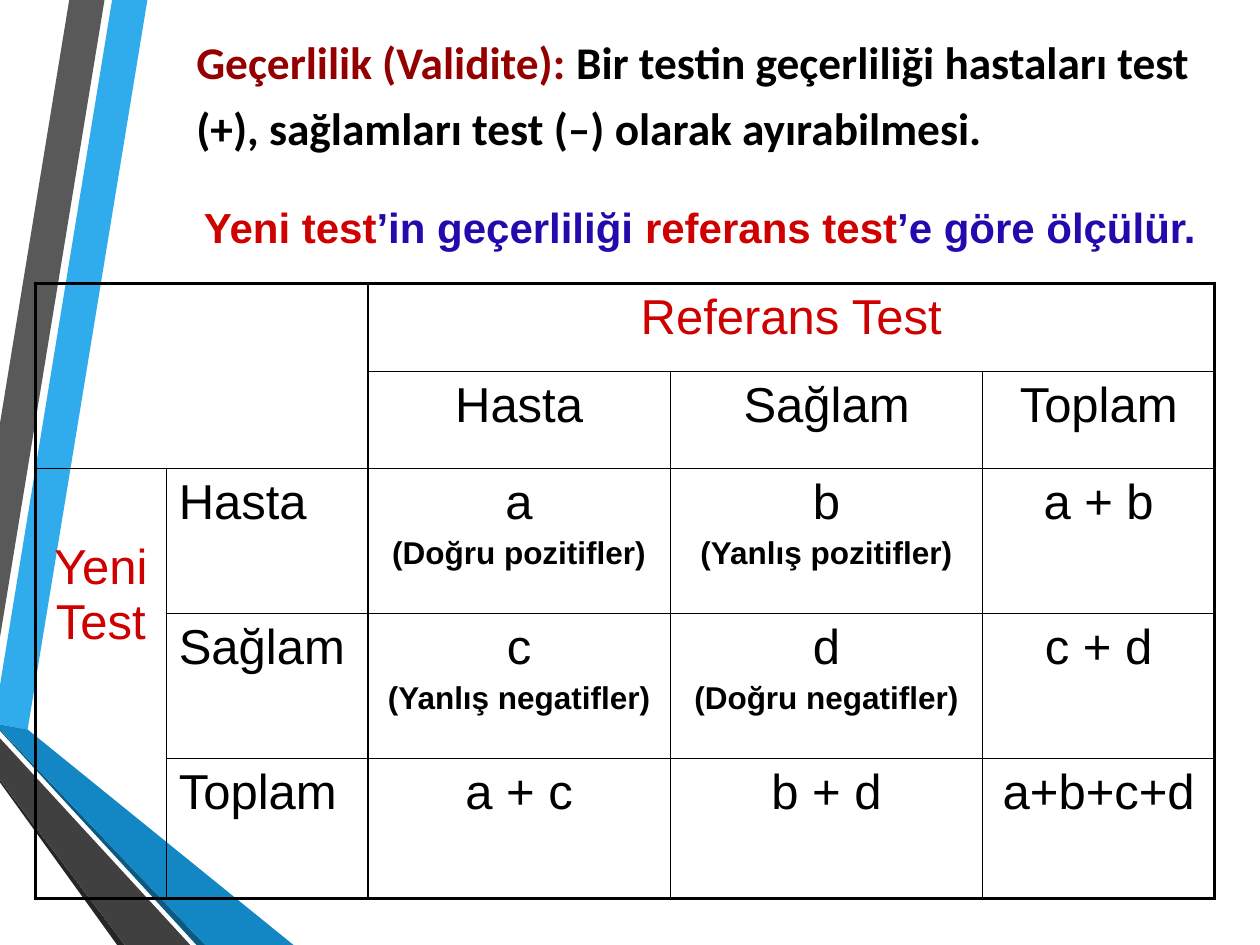
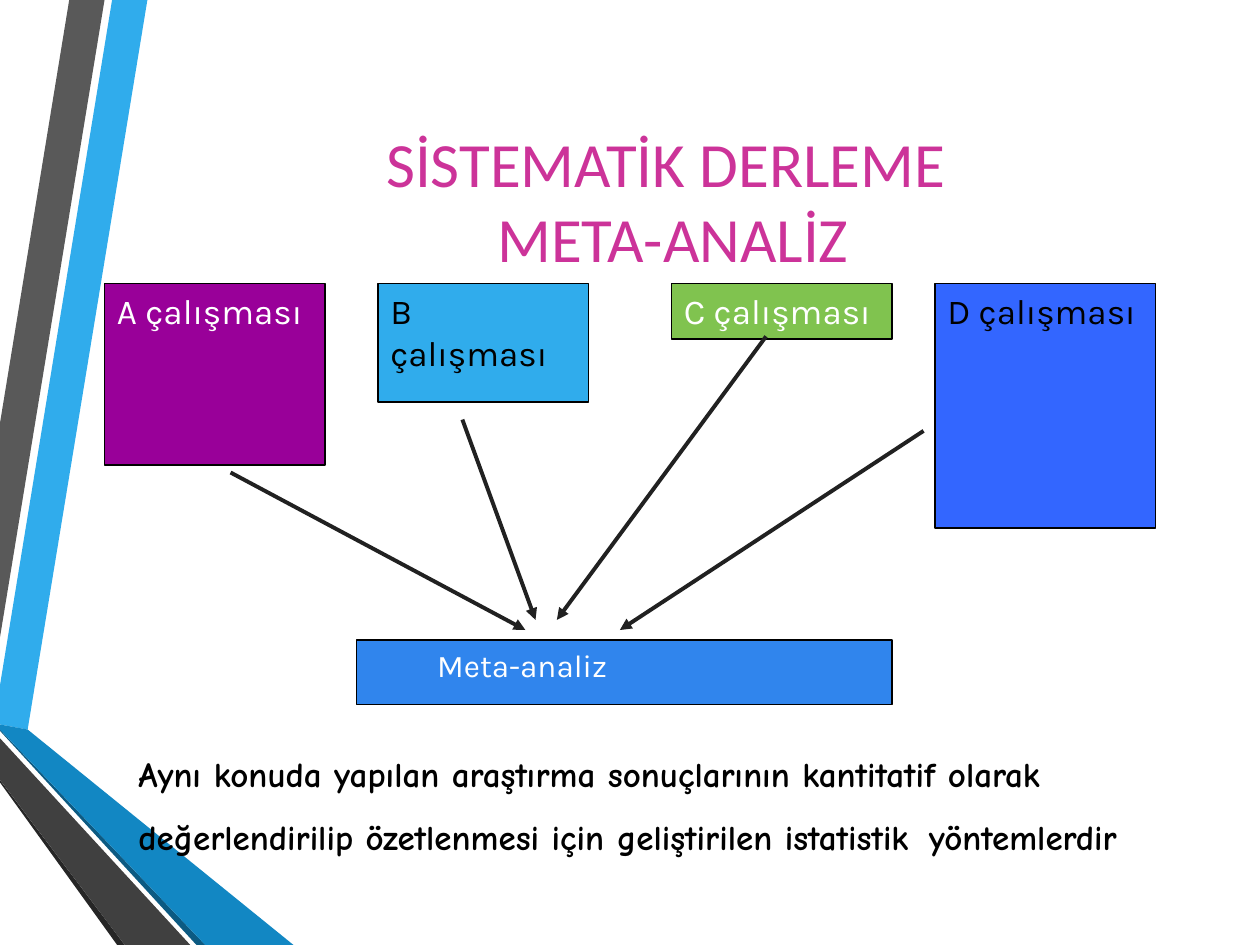
from dataclasses import dataclass
from lxml import etree
from pptx import Presentation
from pptx.dml.color import RGBColor
from pptx.enum.shapes import MSO_CONNECTOR, MSO_SHAPE
from pptx.enum.text import MSO_ANCHOR, PP_ALIGN
from pptx.oxml.ns import qn
from pptx.util import Inches, Pt

LEFT, MID = PP_ALIGN.LEFT, PP_ALIGN.CENTER
TOP, CENTER = MSO_ANCHOR.TOP, MSO_ANCHOR.MIDDLE
RECT, LINE = MSO_SHAPE.RECTANGLE, MSO_CONNECTOR.STRAIGHT


@dataclass(frozen=True)
class Theme:
    black: str = "000000"
    white: str = "FFFFFF"
    red: str = "CE0000"
    maroon: str = "940000"
    indigo: str = "2409AD"
    pink: str = "CC3399"
    sky: str = "30ACEC"
    ocean: str = "1287C3"
    navy: str = "0C5A82"
    gray: str = "595959"
    slate: str = "404040"
    coal: str = "262626"
    purple: str = "990099"
    green: str = "80C34F"
    blue: str = "3366FF"
    azure: str = "3085ED"
    ink: str = "212121"
    head: float = 36
    grid: float = 28
    lead: float = 25.9
    note: float = 24
    body: float = 20
    small: float = 18
    gap: float = 32


T = Theme()


def write(para, parts, size, face, color=T.black, bold=False, align=LEFT):
    para.alignment = align
    font = para.font
    font.size, font.name, font.bold = Pt(size), face, bold
    if isinstance(parts, str):
        font.color.rgb = RGBColor.from_string(color)
        parts = [(parts, None)]
    for text, tint in parts:
        for i, piece in enumerate(text.split("\n")):
            if i:
                para.add_line_break()
            run = para.add_run()
            run.text = piece
            if tint:
                run.font.color.rgb = RGBColor.from_string(tint)


def frame(slide, left, top, width, height, anchor=TOP):
    box = slide.shapes.add_textbox(Inches(left), Inches(top), Inches(width), Inches(height))
    box.text_frame.word_wrap = True
    box.text_frame.vertical_anchor = anchor
    return box.text_frame


deck = Presentation()
deck.slide_width, deck.slide_height = Inches(10), Inches(7.5)
blank = deck.slide_layouts[6]
valid, meta = [deck.slides.add_slide(blank) for _ in range(2)]

bands = [
    (T.sky, [(0, 5.44), (0, 5.75), (0.22, 5.79), (1.17, 0), (0.89, 0)]),
    (T.gray, [(0.83, 0), (0.55, 0), (0, 3.36), (0, 5.06)]),
    (T.coal, [(0, 6.19), (0, 6.21), (0.93, 7.5), (0.99, 7.5)]),
    (T.navy, [(0, 5.79), (0, 5.8), (1.56, 7.5), (1.63, 7.5)]),
    (T.ocean, [(0, 5.79), (1.63, 7.5), (2.33, 7.5), (0.22, 5.79), (0, 5.75)]),
    (T.slate, [(0, 6.19), (0.99, 7.5), (1.51, 7.5), (0, 5.86)]),
]
for slide in (valid, meta):
    for color, points in bands:
        start, *rest = [(Inches(x), Inches(y)) for x, y in points]
        path = slide.shapes.build_freeform(*start)
        path.add_line_segments(rest, close=True)
        band = path.convert_to_shape()
        band.shadow.inherit = False
        band.fill.solid()
        band.fill.fore_color.rgb = RGBColor.from_string(color)
        band.line.fill.background()

lead = frame(valid, 1.46, 0.13, 8.39, 1.15, CENTER).paragraphs[0]
lead.line_spacing = 1.2
write(lead, [
    ("Geçerlilik (Validite): ", T.maroon),
    ("Bir testin geçerliliği hastaları test (+), sağlamları test (–) olarak ayırabilmesi.", T.black),
], T.lead, "Calibri", bold=True)

cols = [1.04, 1.6, 2.4, 2.48, 1.84]
rows = [0.7, 0.77, 1.15, 1.15, 1.11]
cells = [
    ["", "", "Referans Test", "", ""],
    ["", "", "Hasta", "Sağlam", "Toplam"],
    ["Yeni Test", "Hasta", "a\n(Doğru pozitifler)", "b\n(Yanlış pozitifler)", "a + b"],
    ["", "Sağlam", "c\n(Yanlış negatifler)", "d\n(Doğru negatifler)", "c + d"],
    ["", "Toplam", "a + c", "b + d", "a+b+c+d"],
]
table = valid.shapes.add_table(
    len(rows), len(cols), Inches(0.28), Inches(2.25), Inches(sum(cols)), Inches(sum(rows))).table
table.first_row = table.horz_banding = False
for i, width in enumerate(cols):
    table.columns[i].width = Inches(width)
for i, height in enumerate(rows):
    table.rows[i].height = Inches(height)
for first, last in [((0, 0), (1, 1)), ((0, 2), (0, 4)), ((2, 0), (4, 0))]:
    table.cell(*first).merge(table.cell(*last))

for r, row in enumerate(cells):
    for c, text in enumerate(row):
        cell = table.cell(r, c)
        cell.fill.background()
        high = cell.span_height if cell.is_merge_origin else 1
        wide = cell.span_width if cell.is_merge_origin else 1
        edges = {"L": c == 0, "R": c + wide == len(cols), "T": r == 0, "B": r + high == len(rows)}
        props = cell._tc.get_or_add_tcPr()
        for i, (side, outer) in enumerate(edges.items()):
            line = etree.Element(qn(f"a:ln{side}"), w=str(Pt(2.25 if outer else 1)))
            fill = etree.SubElement(line, qn("a:solidFill"))
            etree.SubElement(fill, qn("a:srgbClr"), val=T.black)
            props.insert(i, line)
        if not text:
            continue
        name, *note = text.split("\n")
        color = T.red if cell.is_merge_origin else T.black
        align = LEFT if c == 1 else MID
        write(cell.text_frame.paragraphs[0], name, T.grid, "Arial", color, align=align)
        for label in note:
            para = cell.text_frame.add_paragraph()
            para.space_before = Pt(3.6)
            write(para, label, T.small, "Arial", bold=True, align=align)
table.cell(2, 0).margin_top = Inches(0.57)

rule = frame(valid, 1.52, 1.47, 8.2, 0.59).paragraphs[0]
rule.line_spacing = 1.2
write(rule, [
    ("Yeni test", T.red), ("’in geçerliliği ", T.indigo),
    ("referans test", T.red), ("’e göre ölçülür.", T.indigo),
], T.note, "Arial", bold=True)

title = frame(meta, 1.07, 0.5, 8.43, 2.17, CENTER).paragraphs[0]
write(title, "SİSTEMATİK DERLEME\n META-ANALİZ", T.head, "Calibri", T.pink, align=MID)

boxes = [
    ("A çalışması", 0.83, 2.25, 1.75, 1.44, T.purple, T.white, T.body, 0.1),
    ("B çalışması", 3, 2.25, 1.67, 0.94, T.sky, T.black, T.body, 0.1),
    ("C çalışması", 5.33, 2.25, 1.75, 0.44, T.green, T.white, T.body, 0.1),
    ("D çalışması", 7.42, 2.25, 1.75, 1.94, T.blue, T.black, T.body, 0.1),
    ("Meta-analiz", 2.83, 5.08, 4.25, 0.51, T.azure, T.white, T.small, 0.64),
]
for text, left, top, width, height, fill, color, size, inset in boxes:
    box = meta.shapes.add_shape(RECT, Inches(left), Inches(top), Inches(width), Inches(height))
    box.shadow.inherit = False
    box.fill.solid()
    box.fill.fore_color.rgb = RGBColor.from_string(fill)
    box.line.color.rgb = RGBColor.from_string(T.black)
    box.line.width = Pt(0.75)
    box.text_frame.word_wrap = True
    box.text_frame.vertical_anchor = TOP
    box.text_frame.margin_left = Inches(inset)
    write(box.text_frame.paragraphs[0], text, size, "Karla", color)

arrows = [
    (1.83, 3.75, 4.17, 5), (3.67, 3.33, 4.25, 4.92),
    (6.08, 2.67, 4.42, 4.92), (7.33, 3.42, 4.92, 5),
]
for ends in arrows:
    arrow = meta.shapes.add_connector(LINE, *map(Inches, ends))
    arrow.line.color.rgb = RGBColor.from_string(T.ink)
    arrow.line.width = Pt(2.25)
    etree.SubElement(arrow.line._get_or_add_ln(), qn("a:tailEnd"), type="triangle")
    etree.SubElement(arrow._element.spPr, qn("a:effectLst"))

text = frame(meta, 1, 5.92, 8.17, 1.3).paragraphs[0]
write(text, [
    ("Aynı konuda yapılan araştırma sonuçlarının kantitatif olarak değerlendirilip "
     "özetlenmesi için geliştirilen istatistik", T.black),
    (" ", T.black), ("yöntemlerdir", T.black),
], T.body, "Comic Neue", bold=True)
text.runs[1].font.size = Pt(T.gap)

deck.save("out.pptx")
